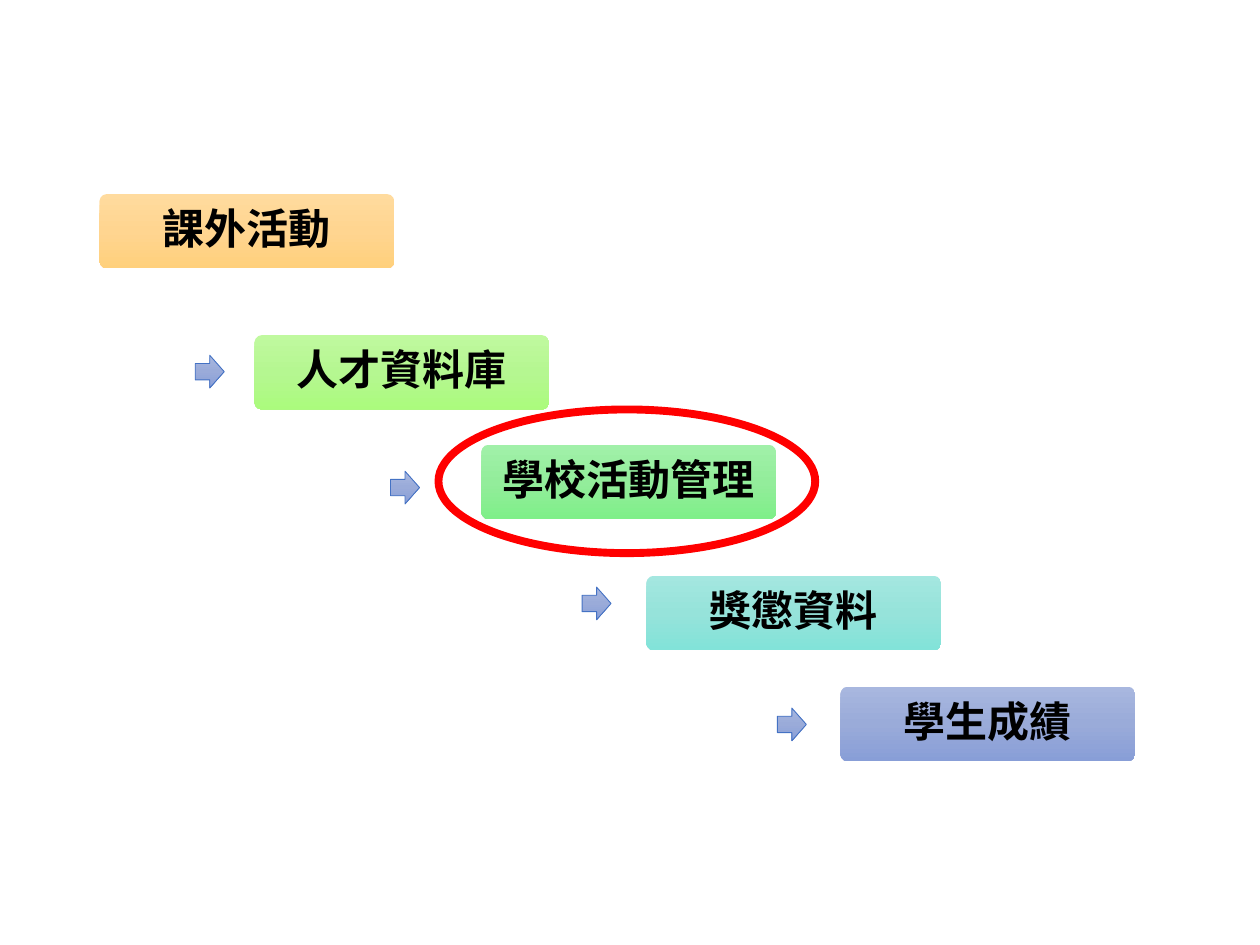
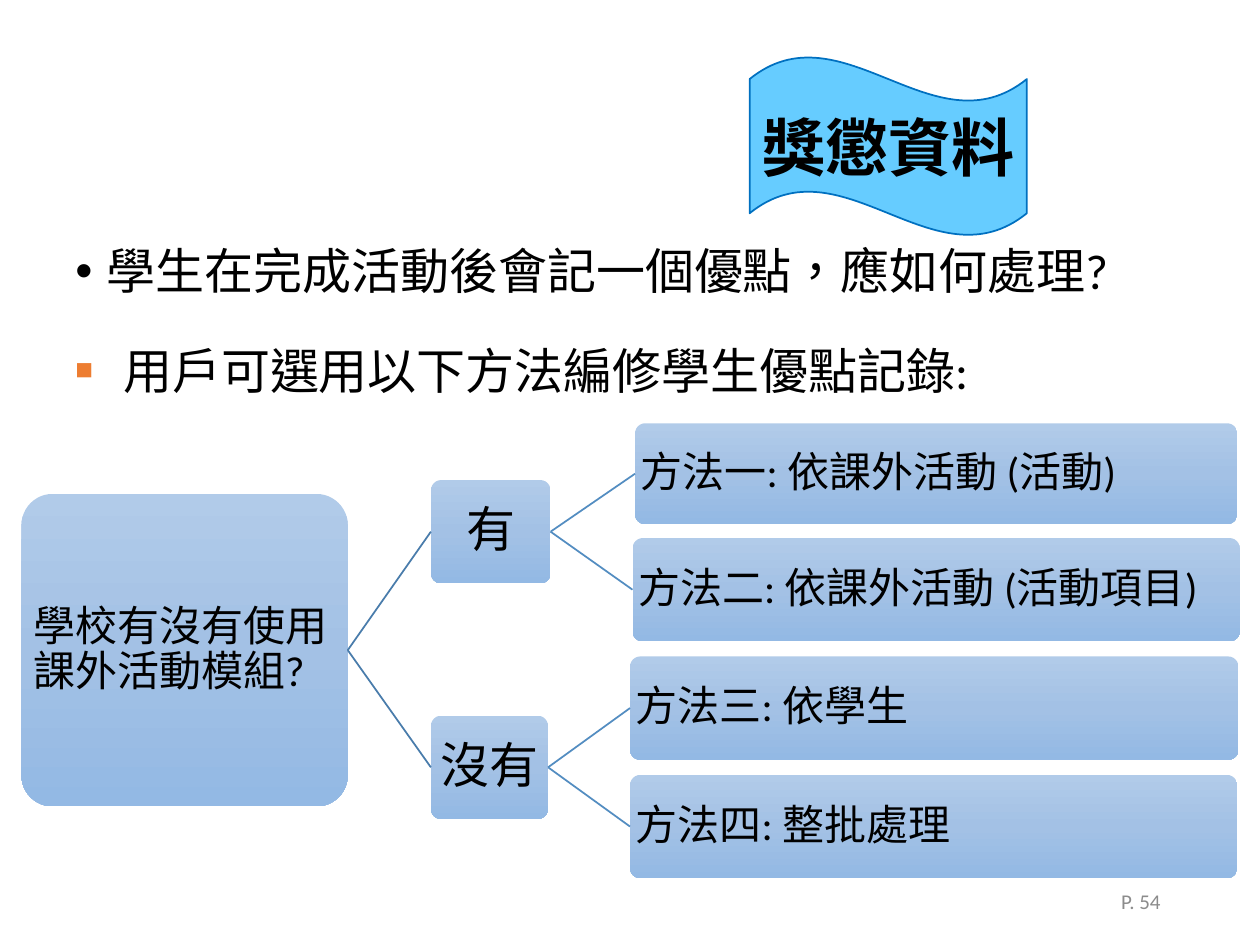
import dataclasses
import copy
import typing

import lxml.etree
import pptx
import pptx.dml.color
import pptx.enum.shapes
import pptx.enum.text
import pptx.oxml.ns
import pptx.util

PX = 9144
KIND = pptx.enum.shapes.MSO_SHAPE
ALIGN = pptx.enum.text.PP_ALIGN
MID = pptx.enum.text.MSO_ANCHOR.MIDDLE
TOP = pptx.enum.text.MSO_ANCHOR.TOP
LEFT_SIDE, RIGHT_SIDE = 1, 3
Shade = typing.Tuple[str, str, str]


@dataclasses.dataclass(frozen=True)
class Theme:
    font: str = "Calibri"
    asian: str = "Noto Sans CJK SC"
    ink: str = "000000"
    gray: str = "8C8C8C"
    ring: str = "FF0000"
    edge: str = "4472C4"
    flag: str = "66CCFF"
    border: str = "0070C0"
    accent: str = "ED7D31"
    trunk: str = "497CAB"
    branch: str = "538DC1"
    amber: Shade = ("FFDB9E", "FFD590", "FFD07C")
    lime: Shade = ("C0F99F", "B5F791", "ABFB7D")
    green: Shade = ("A1F0A9", "93ED9B", "7FEF89")
    teal: Shade = ("A4E7E0", "96E3DA", "82E3D9")
    blue: Shade = ("A8B7DF", "9AABD9", "889ED7")
    sky: Shade = ("B1CBE9", "A3C1E5", "93B9E4")
    small: int = 12
    label: int = 24
    large: int = 28
    title: int = 36


THEME = Theme()


@dataclasses.dataclass(frozen=True)
class Box:
    left: int
    top: int
    width: int
    height: int


@dataclasses.dataclass(frozen=True)
class Style:
    size: int
    font: str = THEME.font
    color: str = THEME.ink
    bold: bool = False
    align: typing.Any = ALIGN.LEFT
    anchor: typing.Any = MID
    side: int = 10
    edge: int = 5
    line: float = 1.0
    after: float = 0.0
    wrap: bool = True


@dataclasses.dataclass(frozen=True)
class Step:
    text: str
    left: int
    top: int
    shade: Shade


@dataclasses.dataclass(frozen=True)
class Node:
    text: str
    box: Box


@dataclasses.dataclass(frozen=True)
class Bullet:
    mark: str
    indent: int
    color: str
    scale: int


STEP = Style(THEME.label, THEME.asian, bold=True, align=ALIGN.CENTER, side=3, edge=3, line=0.9, after=0.35)
NODE = Style(THEME.label, side=2, edge=2, line=0.9, after=0.35)
ANSWER = dataclasses.replace(NODE, size=THEME.large, align=ALIGN.CENTER)
FLAG = Style(THEME.title, bold=True, align=ALIGN.CENTER, wrap=False)
BODY = Style(THEME.large, anchor=TOP)
FOOT = Style(THEME.small, color=THEME.gray, align=ALIGN.RIGHT)

STEPS = [
    Step("課外活動", 79, 154, THEME.amber),
    Step("人才資料庫", 202, 266, THEME.lime),
    Step("學校活動管理", 382, 353, THEME.green),
    Step("獎懲資料", 513, 457, THEME.teal),
    Step("學生成績", 667, 545, THEME.blue),
]
ARROWS = [(155, 282), (310, 374), (462, 466), (617, 562)]
ROOT = Node("學校有沒有使用課外活動模組?", Box(17, 392, 259, 248))
TREE = [
    (Node("有", Box(342, 381, 95, 82)), [
        Node("方法一: 依課外活動 (活動)", Box(504, 336, 478, 80)),
        Node("方法二: 依課外活動 (活動項目)", Box(502, 427, 482, 82)),
    ]),
    (Node("沒有", Box(342, 568, 93, 82)), [
        Node("方法三: 依學生", Box(500, 521, 483, 82)),
        Node("方法四: 整批處理", Box(500, 615, 482, 82)),
    ]),
]


def px(count: int) -> pptx.util.Emu:
    return pptx.util.Emu(count * PX)


def place(box: Box) -> typing.List[pptx.util.Emu]:
    return [px(part) for part in dataclasses.astuple(box)]


def rgb(code: str) -> pptx.dml.color.RGBColor:
    return pptx.dml.color.RGBColor.from_string(code)


def add(parent: typing.Any, tag: str, **attrs: str) -> typing.Any:
    return lxml.etree.SubElement(parent, pptx.oxml.ns.qn(tag), attrs)


def write(shape: typing.Any, text: str, style: Style) -> typing.Any:
    frame = shape.text_frame
    frame.word_wrap = style.wrap
    frame.vertical_anchor = style.anchor
    frame.margin_left = frame.margin_right = px(style.side)
    frame.margin_top = frame.margin_bottom = px(style.edge)
    para = frame.paragraphs[0]
    para.alignment = style.align
    para.line_spacing = style.line
    para.space_after = pptx.util.Pt(style.size * style.after)
    run = para.add_run()
    run.text = text
    run.font.size = pptx.util.Pt(style.size)
    run.font.bold = style.bold
    run.font.color.rgb = rgb(style.color)
    run.font.name = style.font
    props = run._r.get_or_add_rPr()
    props.set("lang", "zh-TW")
    if style.font == THEME.asian:
        add(props, "a:ea", typeface=style.font)
    return para


def blend(shape: typing.Any, shade: Shade) -> None:
    fill = shape.fill
    fill.gradient()
    fill.gradient_angle = 270
    first = shape._element.spPr.find(".//" + pptx.oxml.ns.qn("a:gs"))
    first.addnext(copy.deepcopy(first))
    for stop, place_at, color in zip(fill.gradient_stops, (0, 0.5, 1), shade):
        stop.position = place_at
        stop.color.rgb = rgb(color)


def draw(slide: typing.Any, kind: typing.Any, box: Box, fill: typing.Union[str, Shade, None] = None,
         line: typing.Optional[str] = None, weight: float = 1) -> typing.Any:
    shape = slide.shapes.add_shape(kind, *place(box))
    shape.shadow.inherit = False
    if fill is None:
        shape.fill.background()
    elif isinstance(fill, str):
        shape.fill.solid()
        shape.fill.fore_color.rgb = rgb(fill)
    else:
        blend(shape, fill)
    if line is None:
        shape.line.fill.background()
    else:
        shape.line.color.rgb = rgb(line)
        shape.line.width = pptx.util.Pt(weight)
    return shape


def card(slide: typing.Any, text: str, box: Box, shade: Shade, style: Style) -> typing.Any:
    shape = draw(slide, KIND.ROUNDED_RECTANGLE, box, shade)
    shape.adjustments[0] = 0.1
    write(shape, text, style)
    return shape


def note(slide: typing.Any, text: str, box: Box, style: Style) -> typing.Any:
    return write(slide.shapes.add_textbox(*place(box)), text, style)


def mark(para: typing.Any, bullet: Bullet) -> None:
    props = para._p.get_or_add_pPr()
    props.set("marL", str(px(bullet.indent)))
    props.set("indent", str(-px(bullet.indent)))
    add(add(props, "a:buClr"), "a:srgbClr", val=bullet.color)
    add(props, "a:buSzPct", val=str(bullet.scale * 1000))
    add(props, "a:buFont", typeface="Arial")
    add(props, "a:buChar", char=bullet.mark)


def link(slide: typing.Any, start: typing.Any, end: typing.Any, color: str) -> None:
    line = slide.shapes.add_connector(pptx.enum.shapes.MSO_CONNECTOR.STRAIGHT, 0, 0, 0, 0)
    line.begin_connect(start, RIGHT_SIDE)
    line.end_connect(end, LEFT_SIDE)
    line.line.color.rgb = rgb(color)
    line.line.width = pptx.util.Pt(1)
    add(line._element.spPr, "a:effectLst")


def steps(slide: typing.Any) -> None:
    for step in STEPS:
        card(slide, step.text, Box(step.left, step.top, 234, 59), step.shade, STEP)
    for left, top in ARROWS:
        draw(slide, KIND.RIGHT_ARROW, Box(left, top, 23, 26), THEME.blue, THEME.edge, 0.5)
    draw(slide, KIND.OVAL, Box(348, 325, 299, 114), line=THEME.ring, weight=4.5)


def methods(slide: typing.Any) -> None:
    ask = note(slide, "學生在完成活動後會記一個優點，應如何處理?", Box(50, 191, 902, 70),
               dataclasses.replace(BODY, line=0.9))
    mark(ask, Bullet("•", 25, THEME.ink, 100))
    note(slide, "P. 54", Box(706, 695, 225, 40), FOOT)
    flag = draw(slide, KIND.WAVE, Box(595, 45, 220, 142), THEME.flag, THEME.border)
    write(flag, "獎懲資料", FLAG)
    tell = note(slide, "用戶可選用以下方法編修學生優點記錄:", Box(50, 265, 902, 70), BODY)
    mark(tell, Bullet("■", 38, THEME.accent, 60))
    root = card(slide, ROOT.text, ROOT.box, THEME.sky, NODE)
    for answer, leaves in TREE:
        stem = card(slide, answer.text, answer.box, THEME.sky, ANSWER)
        link(slide, root, stem, THEME.trunk)
        for leaf in leaves:
            tip = card(slide, leaf.text, leaf.box, THEME.sky, NODE)
            link(slide, stem, tip, THEME.branch)


def main() -> None:
    deck = pptx.Presentation()
    deck.slide_width, deck.slide_height = px(1000), px(750)
    for build in (steps, methods):
        build(deck.slides.add_slide(deck.slide_layouts[6]))
    deck.save("out.pptx")


if __name__ == "__main__":
    main()
